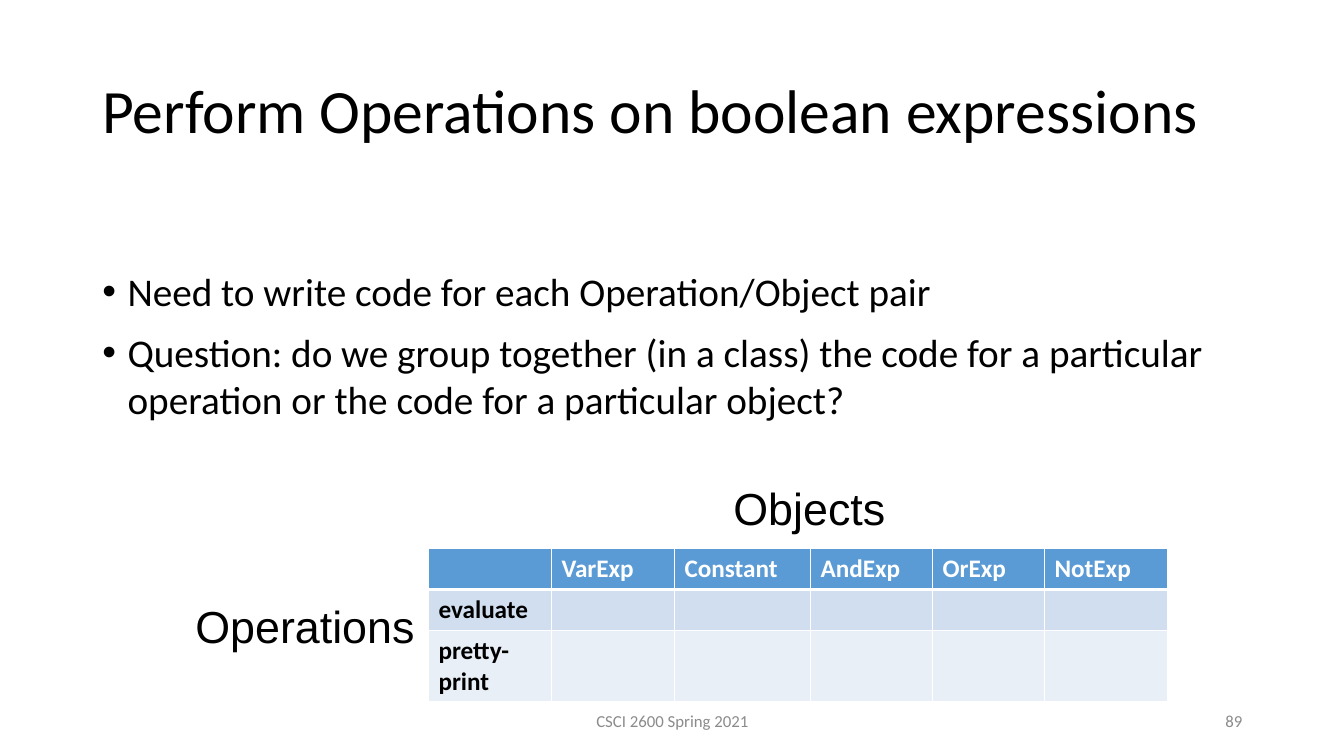
from lxml import etree
from pptx import Presentation
from pptx.dml.color import RGBColor
from pptx.enum.text import MSO_ANCHOR, PP_ALIGN
from pptx.oxml.ns import qn
from pptx.util import Inches, Pt

TOP, MIDDLE = MSO_ANCHOR.TOP, MSO_ANCHOR.MIDDLE
LEFT, CENTER, RIGHT = PP_ALIGN.LEFT, PP_ALIGN.CENTER, PP_ALIGN.RIGHT

BLACK = RGBColor(0x00, 0x00, 0x00)
WHITE = RGBColor(0xFF, 0xFF, 0xFF)
GRAY = RGBColor(0x8B, 0x8B, 0x8B)
BLUE = RGBColor(0x5B, 0x9B, 0xD5)
BAND = RGBColor(0xD1, 0xDE, 0xEF)
PALE = RGBColor(0xE9, 0xEF, 0xF7)

WIDTH, HEIGHT = Inches(13.33), Inches(7.5)
MARGIN, CONTENT = 6.88, 86.25
FOOTER_TOP, FOOTER_HEIGHT = 92.67, 5.33
THIN, THICK = Pt(0.96), Pt(3)

BULLETS = [
    "Need to write code for each Operation/Object pair",
    "Question: do we group together (in a class) the code for a particular "
    "operation or the code for a particular object?",
]
OBJECTS = ["VarExp", "Constant", "AndExp", "OrExp", "NotExp"]
OPERATIONS = ["evaluate", "pretty- print"]
COLUMN_SHARES = [9.15, 9.15, 10.13, 9.08, 8.33, 9.15]
ROW_SHARES = [5.45, 5.45, 9.33]
ROW_FILLS = [BLUE, BAND, PALE]


def across(percent):
    return round(WIDTH * percent / 100)


def down(percent):
    return round(HEIGHT * percent / 100)


def place(left, top, width, height):
    return across(left), down(top), across(width), down(height)


def style(paragraph, size, color, font_name="Calibri", bold=False):
    font = paragraph.font
    font.size, font.name, font.bold = Pt(size), font_name, bold
    font.color.rgb = color


def add_text(slide, area, text, size, color=BLACK, font_name="Calibri",
             align=LEFT, anchor=MIDDLE, wrap=True):
    frame = slide.shapes.add_textbox(*place(*area)).text_frame
    frame.word_wrap = wrap
    frame.vertical_anchor = anchor
    paragraph = frame.paragraphs[0]
    paragraph.text = text
    paragraph.alignment = align
    style(paragraph, size, color, font_name)
    return frame


def add_bullet_mark(paragraph):
    properties = paragraph._p.get_or_add_pPr()
    properties.set("marL", str(Inches(0.25)))
    properties.set("indent", str(-Inches(0.25)))
    font = etree.Element(qn("a:buFont"), typeface="Arial")
    mark = etree.Element(qn("a:buChar"), char="•")
    defaults = properties.find(qn("a:defRPr"))
    defaults.addprevious(font)
    defaults.addprevious(mark)


def add_bullets(slide, area, items):
    frame = add_text(slide, area, items[0], 28, anchor=TOP)
    frame.margin_top = down(8.65)
    for item in items[1:]:
        paragraph = frame.add_paragraph()
        paragraph.text = item
        paragraph.space_before = Pt(10)
        style(paragraph, 28, BLACK)
    for paragraph in frame.paragraphs:
        add_bullet_mark(paragraph)


def set_borders(cell, top, bottom):
    properties = cell._tc.get_or_add_tcPr()
    widths = {"a:lnL": THIN, "a:lnR": THIN, "a:lnT": top, "a:lnB": bottom}
    for position, (tag, width) in enumerate(widths.items()):
        line = etree.Element(qn(tag), w=str(width))
        fill = etree.SubElement(line, qn("a:solidFill"))
        etree.SubElement(fill, qn("a:srgbClr"), val=str(WHITE))
        properties.insert(position, line)


def add_table(slide, left, top, rows):
    area = place(left, top, sum(COLUMN_SHARES), sum(ROW_SHARES))
    table = slide.shapes.add_table(len(rows), len(rows[0]), *area).table
    table.horz_banding = False
    for column, share in zip(table.columns, COLUMN_SHARES):
        column.width = across(share)
    for index, texts in enumerate(rows):
        table.rows[index].height = down(ROW_SHARES[index])
        for cell, text in zip(table.rows[index].cells, texts):
            cell.text = text
            style(cell.text_frame.paragraphs[0], 18,
                  BLACK if index else WHITE, bold=True)
            cell.fill.solid()
            cell.fill.fore_color.rgb = ROW_FILLS[index]
            set_borders(cell, THICK if index == 1 else THIN,
                        THICK if index == 0 else THIN)


def main():
    presentation = Presentation()
    presentation.slide_width, presentation.slide_height = WIDTH, HEIGHT
    slide = presentation.slides.add_slide(presentation.slide_layouts[6])

    title = add_text(slide, (MARGIN, 5.33, CONTENT, 19.33),
                     "Perform Operations on boolean expressions", 44)
    title.paragraphs[0].line_spacing = 0.9
    add_bullets(slide, (MARGIN, 26.67, CONTENT, 63.47), BULLETS)

    rows = [[""] + OBJECTS]
    rows += [[operation] + [""] * len(OBJECTS) for operation in OPERATIONS]
    add_table(slide, 31.88, 72.53, rows)

    for text, area in [("Objects", (53.83, 62.93, 13, 8.4)),
                       ("Operations", (13.8, 78.53, 18.08, 8.4))]:
        add_text(slide, area, text, 32, font_name="Arial", anchor=TOP, wrap=False)
    for text, left, width, align in [("CSCI 2600 Spring 2021", 33.16, 33.75, CENTER),
                                     ("89", 70.67, 22.5, RIGHT)]:
        add_text(slide, (left, FOOTER_TOP, width, FOOTER_HEIGHT), text, 12,
                 GRAY, align=align)

    presentation.save("out.pptx")


if __name__ == "__main__":
    main()
